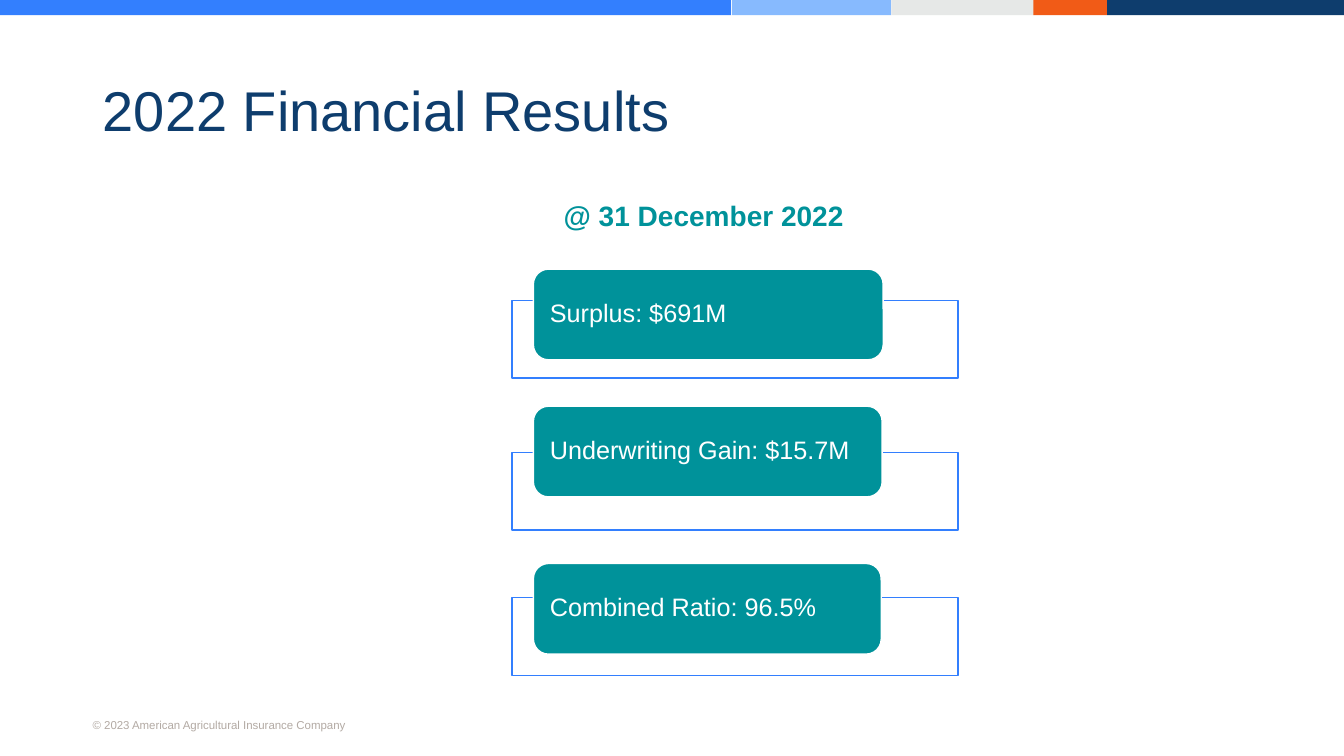
from lxml import etree
from pptx import Presentation
from pptx.dml.color import RGBColor
from pptx.enum.shapes import MSO_SHAPE
from pptx.enum.text import MSO_ANCHOR, PP_ALIGN
from pptx.oxml.ns import qn
from pptx.util import Inches, Pt

BLUE = RGBColor(0x33, 0x7F, 0xFE)
LIGHT_BLUE = RGBColor(0x87, 0xBA, 0xFE)
PALE_GREY = RGBColor(0xE6, 0xE8, 0xE7)
ORANGE = RGBColor(0xF1, 0x5B, 0x17)
NAVY = RGBColor(0x0E, 0x3D, 0x6D)
TEAL = RGBColor(0x00, 0x92, 0x9A)
FOOTER_GREY = RGBColor(0xB3, 0xAA, 0xA4)
WHITE = RGBColor(0xFF, 0xFF, 0xFF)

# Left edge, width, colour
BANDS = [
    (0, 7.25, BLUE),
    (7.26, 1.58, LIGHT_BLUE),
    (8.84, 1.42, PALE_GREY),
    (10.98, 2.35, NAVY),
    (10.25, 0.73, ORANGE),
]
# Label, frame top, label top, label width
RESULTS = [
    ("Surplus: $691M", 2.98, 2.67, 3.47),
    ("Underwriting Gain: $15.7M", 4.49, 4.03, 3.46),
    ("Combined Ratio: 96.5%", 5.93, 5.59, 3.45),
]


def set_text(shape, text, size, color, bold=False, spacing=None, **frame):
    tf = shape.text_frame
    tf.word_wrap = True
    for name, value in frame.items():
        setattr(tf, name, value)
    p = tf.paragraphs[0]
    p.alignment = PP_ALIGN.LEFT
    if spacing:
        p.line_spacing = spacing
    r = p.add_run()
    r.text = text
    r.font.color.rgb = color
    for name, value in {"name": "Arial", "size": Pt(size), "bold": bold}.items():
        setattr(r.font, name, value)


def add_box(s, kind, box, fill, line=None):
    sp = s.shapes.add_shape(kind, *map(Inches, box))
    sp.shadow.inherit = False
    sp.fill.solid()
    sp.fill.fore_color.rgb = fill
    if line is None:
        sp.line.fill.background()
    else:
        sp.line.color.rgb = line
        sp.line.width = Pt(1)
    return sp


def add_label(s, box, text, size, color, **options):
    tb = s.shapes.add_textbox(*map(Inches, box))
    set_text(tb, text, size, color, **options)


def add_result(s, text, frame_top, label_top, label_width):
    # Frame at 90 % opacity behind the rounded label
    frame = add_box(s, MSO_SHAPE.RECTANGLE, (5.08, frame_top, 4.42, 0.77), WHITE, BLUE)
    color = frame.fill._xPr.find(qn("a:solidFill"))[0]
    etree.SubElement(color, qn("a:alpha")).set("val", "90000")
    label = add_box(s, MSO_SHAPE.ROUNDED_RECTANGLE,
                    (5.29, label_top, label_width, 0.9), TEAL, WHITE)
    set_text(label, text, 18, WHITE, spacing=0.9,
             vertical_anchor=MSO_ANCHOR.MIDDLE,
             margin_left=Inches(0.12), margin_right=Inches(0.12),
             margin_top=0, margin_bottom=0)


def add_title(s, text):
    title = s.shapes.title
    title.left, title.top, title.width, title.height = map(
        Inches, (0.92, 0.4, 11.5, 1.45))
    set_text(title, text, 40, NAVY, spacing=0.9,
             vertical_anchor=MSO_ANCHOR.MIDDLE)


def main():
    prs = Presentation()
    prs.slide_width, prs.slide_height = Inches(13.33), Inches(7.5)
    s = prs.slides.add_slide(prs.slide_layouts[5])

    # Footer and colour bar
    add_label(s, (0.82, 7.07, 5.55, 0.24),
              "© 2023 American Agricultural Insurance Company", 8.2, FOOTER_GREY)
    for left, width, color in BANDS:
        add_box(s, MSO_SHAPE.RECTANGLE, (left, 0, width, 0.15), color)

    # Title and date
    add_title(s, "2022 Financial Results")
    add_label(s, (5.57, 1.97, 4.21, 0.34), "@ 31 December 2022", 20, TEAL, bold=True,
              margin_left=Inches(0.02), margin_right=0, margin_top=0, margin_bottom=0)

    # Results
    for result in RESULTS:
        add_result(s, *result)

    prs.save("out.pptx")


if __name__ == "__main__":
    main()
